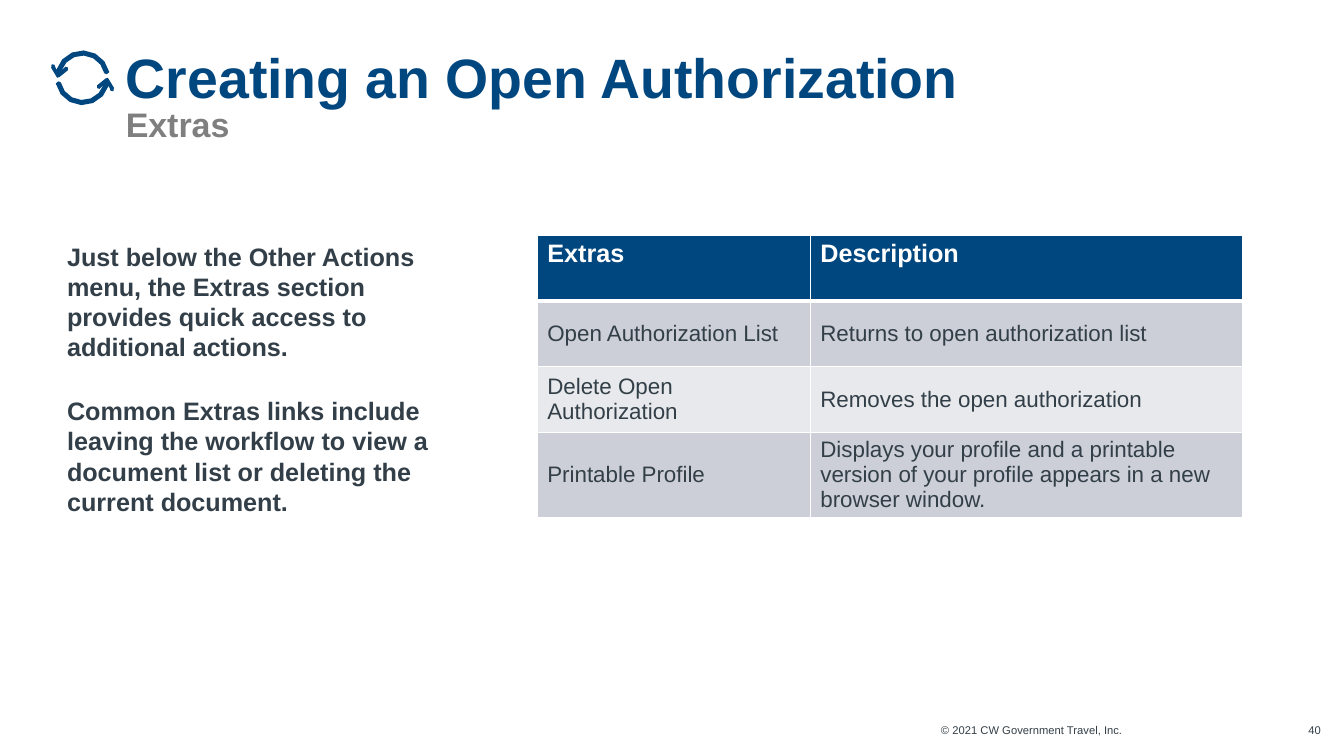
"""Build the slide on the Extras links of an open authorization."""
from dataclasses import dataclass
from math import cos, radians, sin

from lxml.etree import SubElement
from pptx import Presentation
from pptx.dml.color import RGBColor
from pptx.enum.text import MSO_ANCHOR as Anchor, MSO_AUTO_SIZE as AutoSize, PP_ALIGN as Align
from pptx.oxml.ns import qn
from pptx.slide import Slide
from pptx.table import _Cell as Cell
from pptx.text.text import Font, TextFrame
from pptx.util import Cm, Pt

NAVY = RGBColor(0x00, 0x46, 0x7F)
SLATE = RGBColor(0x33, 0x3F, 0x48)
GREY = RGBColor(0x7F, 0x7F, 0x7F)
WHITE = RGBColor(0xFF, 0xFF, 0xFF)
BAND_DARK = RGBColor(0xCC, 0xCF, 0xD8)
BAND_LIGHT = RGBColor(0xE7, 0xE9, 0xEC)

ICON_CENTER = (2.08, 1.96)
OUTER_RADIUS, INNER_RADIUS = 0.69, 0.56
ARROWHEAD = [(-0.71, -0.33), (-0.78, -0.34), (-0.79, -0.25), (-0.64, 0), (-0.58, -0.02),
             (-0.37, -0.19), (-0.37, -0.26), (-0.43, -0.28), (-0.53, -0.18)]
ARROW_TAIL = (0.61, -0.09)


@dataclass(frozen=True)
class TextBlock:
    """Text with its place in centimetres and its format."""
    paragraphs: tuple[str, ...]
    left: float
    top: float
    width: float
    height: float
    size: float
    bold: bool = False
    align: Align = Align.LEFT
    anchor: Anchor = Anchor.TOP


@dataclass(frozen=True)
class TableRow:
    """One table row with its look."""
    extra: str
    description: str
    fill: RGBColor
    height: float = 1.66
    size: int = 16
    color: RGBColor = SLATE
    bold: bool = False
    anchor: Anchor = Anchor.MIDDLE
    bottom_border: int = 1


BLOCKS = [
    TextBlock(("Just below the Other Actions menu, the Extras section provides quick access to "
               "additional actions.",
               "Common Extras links include leaving the workflow to view a document list or "
               "deleting the current document."),
              1.69, 5.92, 9.32, 7.24, 18, bold=True, anchor=Anchor.MIDDLE),
    TextBlock(("© 2021 CW Government Travel, Inc.",), 21.29, 18.22, 7, 0.36, 8, align=Align.RIGHT),
    TextBlock(("40",), 32.71, 18.22, 0.58, 0.36, 8, align=Align.RIGHT),
]
ROWS = [
    TableRow("Extras", "Description", NAVY, size=18, color=WHITE, bold=True,
             anchor=Anchor.TOP, bottom_border=3),
    TableRow("Open Authorization List", "Returns to open authorization list", BAND_DARK),
    TableRow("Delete Open Authorization", "Removes the open authorization", BAND_LIGHT),
    TableRow("Printable Profile",
             "Displays your profile and a printable version of your profile appears in a new "
             "browser window.", BAND_DARK, height=1.55),
]
COLUMN_WIDTHS = (6.88, 10.9)


def format_font(font: Font, size: float, color: RGBColor, bold: bool) -> None:
    """Set the look of a run."""
    font.name = "Arial"
    font.size = Pt(size)
    font.bold = bold
    font.color.rgb = color


def prepare_frame(frame: TextFrame, anchor: Anchor) -> None:
    """Wrap the text inside a frame without margins."""
    frame.word_wrap = True
    frame.auto_size = AutoSize.NONE
    frame.vertical_anchor = anchor
    frame.margin_left = frame.margin_top = frame.margin_right = frame.margin_bottom = 0


def add_title(slide: Slide) -> None:
    """Fill the title placeholder with heading and subheading."""
    title = slide.shapes.title
    title.left, title.top, title.width, title.height = Cm(3.17), Cm(1.35), Cm(29.29), Cm(2.34)
    prepare_frame(title.text_frame, Anchor.TOP)
    title.text_frame.text = "Creating an Open Authorization\vExtras"
    heading = title.text_frame.paragraphs[0]
    heading.alignment = Align.LEFT
    heading.line_spacing = 0.85
    for run, size, color in zip(heading.runs, (39.6, 24.3), (NAVY, GREY)):
        format_font(run.font, size, color, True)
    SubElement(heading._p.find(qn("a:br")), qn("a:rPr"), sz="3960")


def arc(radius: float, start: int, end: int) -> list[tuple[float, float]]:
    """Return points along an arc around the icon center."""
    steps = 6
    angles = [radians(start + (end - start) * step / steps) for step in range(steps + 1)]
    return [(radius * cos(angle), -radius * sin(angle)) for angle in angles]


def add_cycle_arrow(slide: Slide, side: int) -> None:
    """Draw the upper (1) or lower (-1) arrow of the cycle icon."""
    outline = [*arc(OUTER_RADIUS, 12, 163), *ARROWHEAD, *arc(INNER_RADIUS, 161, 12), ARROW_TAIL]
    center_x, center_y = ICON_CENTER
    points = [(Cm(center_x + side * x), Cm(center_y + side * y)) for x, y in outline]
    builder = slide.shapes.build_freeform(*points[0])
    builder.add_line_segments(points[1:], close=True)
    arrow = builder.convert_to_shape()
    arrow.shadow.inherit = False
    arrow.fill.solid()
    arrow.fill.fore_color.rgb = NAVY
    arrow.line.fill.background()


def add_text_block(slide: Slide, block: TextBlock) -> None:
    """Add one text box."""
    box = slide.shapes.add_textbox(Cm(block.left), Cm(block.top), Cm(block.width), Cm(block.height))
    prepare_frame(box.text_frame, block.anchor)
    box.text_frame.text = "\n".join(block.paragraphs)
    for index, paragraph in enumerate(box.text_frame.paragraphs):
        paragraph.alignment = block.align
        paragraph.space_before = Pt(12 if index else 0)
        paragraph.space_after = Pt(12 if index < len(block.paragraphs) - 1 else 0)
        format_font(paragraph.runs[0].font, block.size, SLATE, block.bold)


def add_borders(cell: Cell, top: int, bottom: int) -> None:
    """Give a cell white borders, with widths in points."""
    properties = cell._tc.get_or_add_tcPr()
    for tag, width in (("a:lnL", 1), ("a:lnR", 1), ("a:lnT", top), ("a:lnB", bottom)):
        border = SubElement(properties, qn(tag), w=str(Pt(width)))
        SubElement(SubElement(border, qn("a:solidFill")), qn("a:srgbClr"), val=str(WHITE))


def add_extras_table(slide: Slide) -> None:
    """Add the table of extras and their descriptions."""
    extras = slide.shapes.add_table(
        len(ROWS), len(COLUMN_WIDTHS), Cm(13.54), Cm(5.92), Cm(sum(COLUMN_WIDTHS)),
        Cm(sum(row.height for row in ROWS))).table
    for column, width in zip(extras.columns, COLUMN_WIDTHS):
        column.width = Cm(width)
    top_border = 1
    for table_row, row in zip(extras.rows, ROWS):
        table_row.height = Cm(row.height)
        for cell, text in zip(table_row.cells, (row.extra, row.description)):
            cell.text_frame.text = text
            cell.vertical_anchor = row.anchor
            format_font(cell.text_frame.paragraphs[0].runs[0].font, row.size, row.color, row.bold)
            add_borders(cell, top_border, row.bottom_border)
            cell.fill.solid()
            cell.fill.fore_color.rgb = row.fill
        top_border = row.bottom_border


def main() -> None:
    """Build and save the presentation."""
    presentation = Presentation()
    presentation.slide_width, presentation.slide_height = Cm(33.87), Cm(19.05)
    slide = presentation.slides.add_slide(presentation.slide_layouts[5])
    add_title(slide)
    for side in (1, -1):
        add_cycle_arrow(slide, side)
    add_extras_table(slide)
    for block in BLOCKS:
        add_text_block(slide, block)
    presentation.save("out.pptx")


if __name__ == "__main__":
    main()
